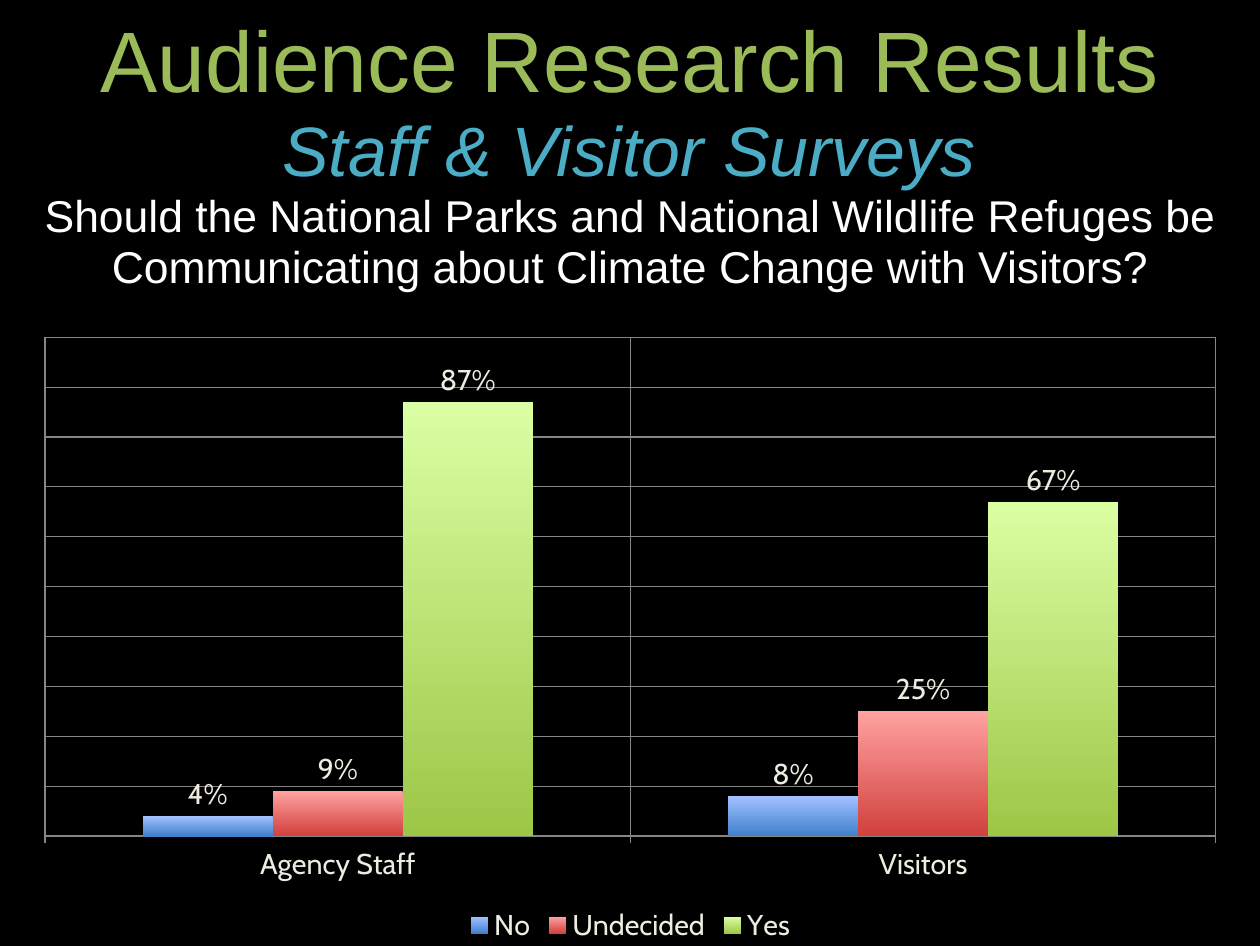
from lxml.etree import SubElement
from pptx import Presentation
from pptx.chart.data import CategoryChartData
from pptx.dml.color import RGBColor
from pptx.enum.chart import XL_CHART_TYPE, XL_LABEL_POSITION, XL_LEGEND_POSITION, XL_TICK_LABEL_POSITION, XL_TICK_MARK
from pptx.enum.text import MSO_ANCHOR, PP_ALIGN
from pptx.oxml.ns import qn
from pptx.util import Pt

BLACK = RGBColor(0x00, 0x00, 0x00)
WHITE = RGBColor(0xFF, 0xFF, 0xFF)
GREEN = RGBColor(0x9B, 0xBB, 0x59)
TEAL = RGBColor(0x4B, 0xAC, 0xC6)
CREAM = RGBColor(0xEE, 0xEC, 0xE1)
GRAY = RGBColor(0x86, 0x86, 0x86)

CATEGORIES = ["Agency Staff", "Visitors"]
# Answer, shares, colours at the top and bottom of the columns
ANSWERS = [
    ("No", (0.04, 0.08), RGBColor(0xA2, 0xC1, 0xFF), RGBColor(0x3F, 0x80, 0xCD)),
    ("Undecided", (0.09, 0.25), RGBColor(0xFF, 0xA2, 0xA1), RGBColor(0xD1, 0x40, 0x3C)),
    ("Yes", (0.87, 0.67), RGBColor(0xDA, 0xFF, 0xA3), RGBColor(0x9C, 0xC7, 0x46)),
]


def style_font(font, size, color, name, italic=False):
    font.size = Pt(size)
    font.color.rgb = color
    font.name = name
    font.italic = italic


def add_line(p, text, size, color, name="Arial", italic=False):
    p.alignment = PP_ALIGN.CENTER
    p.line_spacing = 0.95
    r = p.add_run()
    r.text = text
    style_font(r.font, size, color, name, italic)


def add_heading(slide):
    tf = slide.shapes.add_textbox(Pt(24.5), Pt(8), Pt(744), Pt(178)).text_frame
    tf.word_wrap = True
    tf.vertical_anchor = MSO_ANCHOR.MIDDLE
    tf.margin_left = tf.margin_right = tf.margin_top = tf.margin_bottom = 0
    add_line(tf.paragraphs[0], "Audience Research Results", size=54, color=GREEN)
    add_line(tf.add_paragraph(), "Staff & Visitor Surveys", size=44, color=TEAL, italic=True)
    add_line(tf.add_paragraph(), "Should the National Parks and National Wildlife Refuges be "
             "Communicating about Climate Change with Visitors?", size=28, color=WHITE)


def draw_grid(axis):
    axis.has_major_gridlines = True
    for line in (axis.major_gridlines.format.line, axis.format.line):
        line.color.rgb = GRAY
        line.width = Pt(0.75)


def place_plot(chart, **box):
    """Fix the inner plot area, as fractions of the chart's size."""
    area = chart._chartSpace.chart.plotArea
    for old in area.findall(qn("c:layout")):
        area.remove(old)
    layout = SubElement(area, qn("c:layout"))
    area.insert(0, layout)
    manual = SubElement(layout, qn("c:manualLayout"))
    settings = {"layoutTarget": "inner", "xMode": "edge", "yMode": "edge", **box}
    for tag, value in settings.items():
        SubElement(manual, qn(f"c:{tag}")).set("val", str(value))


def style_series(series, top, bottom):
    fill = series.format.fill
    fill.gradient()
    fill.gradient_angle = 270
    for stop, color, position in zip(fill.gradient_stops, (top, bottom), (0, 1)):
        stop.color.rgb = color
        stop.position = position
    series.invert_if_negative = False
    labels = series.data_labels
    labels.show_value = True
    labels.number_format = "0%"
    labels.number_format_is_linked = False
    labels.position = XL_LABEL_POSITION.OUTSIDE_END
    style_font(labels.font, 18, CREAM, "Cabin")


def add_survey_chart(slide):
    data = CategoryChartData(number_format="0%")
    data.categories = CATEGORIES
    for name, shares, _, _ in ANSWERS:
        data.add_series(name, shares)
    chart = slide.shapes.add_chart(XL_CHART_TYPE.COLUMN_CLUSTERED, Pt(13), Pt(204.5),
                                   Pt(768), Pt(392.5), data).chart
    style_font(chart.font, 18, CREAM, "Cabin")
    chart.has_title = False
    chart.has_legend = True
    chart.legend.position = XL_LEGEND_POSITION.BOTTOM
    chart.legend.include_in_layout = False
    place_plot(chart, x=0.02, y=0.02, w=0.96, h=0.8)

    plot = chart.plots[0]
    plot.gap_width = 150
    plot.overlap = 0
    plot.vary_by_categories = False
    for series, (_, _, top, bottom) in zip(plot.series, ANSWERS):
        style_series(series, top, bottom)

    draw_grid(chart.category_axis)
    chart.category_axis.major_tick_mark = XL_TICK_MARK.OUTSIDE
    chart.category_axis.tick_label_position = XL_TICK_LABEL_POSITION.LOW
    value_axis = chart.value_axis
    draw_grid(value_axis)
    value_axis.minimum_scale, value_axis.maximum_scale, value_axis.major_unit = 0, 1, 0.1
    value_axis.visible = False


def main():
    prs = Presentation()
    prs.slide_width, prs.slide_height = Pt(793.5), Pt(595.5)
    slide = prs.slides.add_slide(prs.slide_layouts[6])
    slide.background.fill.solid()
    slide.background.fill.fore_color.rgb = BLACK
    add_heading(slide)
    add_survey_chart(slide)
    prs.save("out.pptx")


if __name__ == "__main__":
    main()
